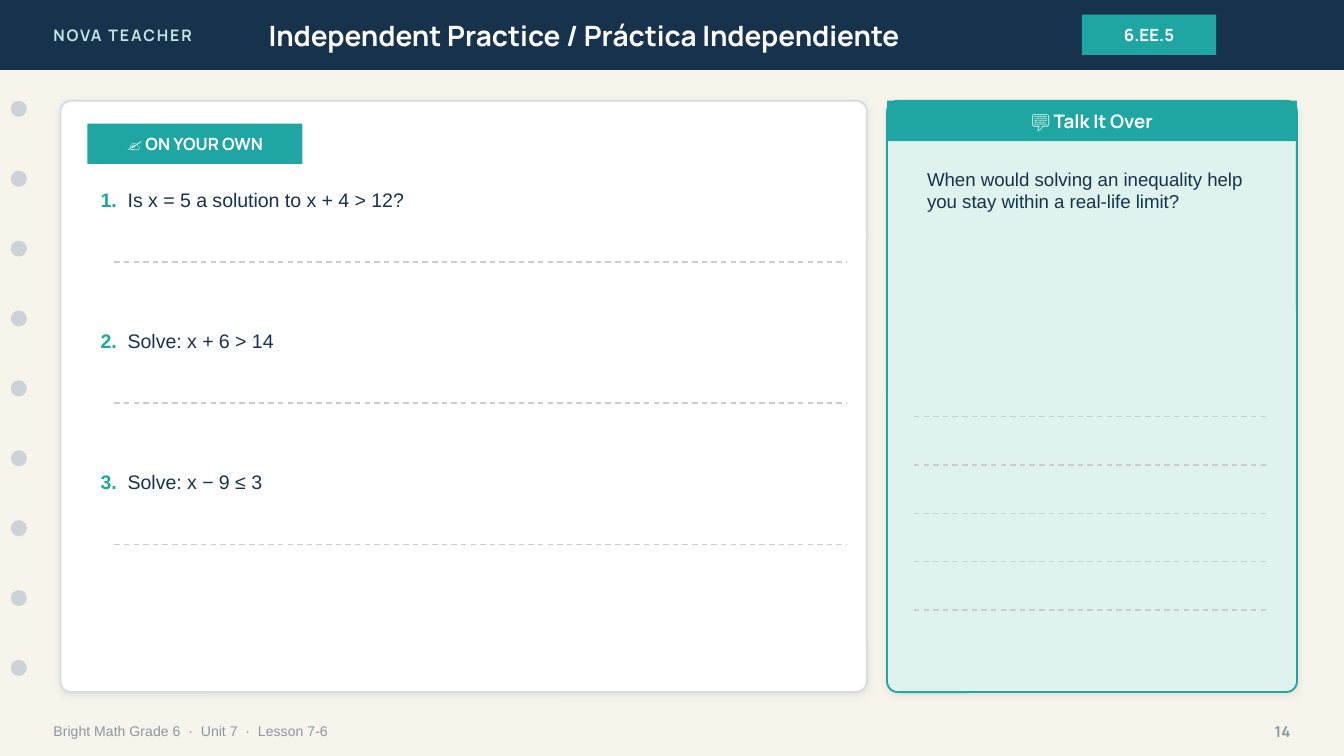
import pptx
import pptx.util
import pptx.dml.color
import pptx.enum.dml
import pptx.enum.shapes
import pptx.enum.text
import pptx.oxml
import pptx.oxml.ns

RGBColor = pptx.dml.color.RGBColor
SHAPE = pptx.enum.shapes.MSO_SHAPE
ALIGN = pptx.enum.text.PP_ALIGN
ANCHOR = pptx.enum.text.MSO_ANCHOR

# Content
BRAND = "NOVA TEACHER"
TITLE = "Independent Practice / Práctica Independiente"
STANDARD = "6.EE.5"
PRACTICE_LABEL = "✍️ ON YOUR OWN"
PROBLEMS = ["Is x = 5 a solution to x + 4 > 12?", "Solve: x + 6 > 14", "Solve: x − 9 ≤ 3"]
TALK_LABEL = "💬 Talk It Over"
TALK_PROMPT = "When would solving an inequality help you stay within a real-life limit?"
FOOTER = "Bright Math Grade 6  ·  Unit 7  ·  Lesson 7-6"
PAGE = "14"

# Style
HEAD, BODY = "Manrope", "Arial"
NAVY = RGBColor(0x17, 0x32, 0x4D)
TEAL = RGBColor(0x1F, 0xA6, 0xA2)
MINT = RGBColor(0xDF, 0xF2, 0xEE)
AQUA = RGBColor(0xBF, 0xE6, 0xE2)
CREAM = RGBColor(0xF7, 0xF4, 0xEC)
WHITE = RGBColor(0xFF, 0xFF, 0xFF)
HOLE = RGBColor(0xCB, 0xD3, 0xD9)
BORDER = RGBColor(0xD6, 0xDB, 0xDF)
RULE = RGBColor(0xC7, 0xCD, 0xD2)
GREY = RGBColor(0x8A, 0x96, 0xA3)

# Grid: all lengths are hundredths of the slide width
prs = pptx.Presentation()
prs.slide_width = pptx.util.Inches(10)
prs.slide_height = prs.slide_width * 9 // 16
HEADER_H = 5.2
TOP, CARD_H, TAG_H = 7.5, 44, 3
LEFT, LEFT_W = 4.5, 60
RIGHT, RIGHT_W = 66, 30.5
INSET = 2
HOLES, HOLE_STEP = 9, 5.2
PROBLEM_TOP, PROBLEM_STEP, ANSWER_DROP = 13.5, 10.5, 6
NOTE_TOP, NOTE_LINES, NOTE_STEP = 31, 5, 3.6

slide = prs.slides.add_slide(prs.slide_layouts[6])
slide.background.fill.solid()
slide.background.fill.fore_color.rgb = CREAM


def grid(*lengths):
    return [round(prs.slide_width * n / 100) for n in lengths]


def write(s, runs, align=ALIGN.LEFT, anchor=ANCHOR.MIDDLE):
    """Runs are (text, font, size, colour, bold)."""
    tf = s.text_frame
    tf.word_wrap = True
    tf.vertical_anchor = anchor
    p = tf.paragraphs[0]
    p.alignment = align
    for text, font, size, colour, bold in runs:
        r = p.add_run()
        r.text = text
        r.font.name, r.font.size, r.font.bold = font, pptx.util.Pt(size), bold
        r.font.color.rgb = colour
    return p


def add_text(box, runs, **layout):
    return write(slide.shapes.add_textbox(*grid(*box)), runs, **layout)


def add_block(kind, box, fill):
    s = slide.shapes.add_shape(kind, *grid(*box))
    s.shadow.inherit = False
    s.fill.solid()
    s.fill.fore_color.rgb = fill
    s.line.fill.background()
    return s


def add_tag(box, text, size):
    s = add_block(SHAPE.RECTANGLE, box, TEAL)
    write(s, [(text, HEAD, size, WHITE, True)], ALIGN.CENTER)


def add_card(box, fill, border, radius):
    s = add_block(SHAPE.ROUNDED_RECTANGLE, box, fill)
    s.adjustments[0] = radius
    s.line.color.rgb = border
    s.line.width = pptx.util.Pt(1)
    effects = s._element.spPr.find(pptx.oxml.ns.qn("a:effectLst"))
    effects.append(pptx.oxml.parse_xml(
        f'<a:outerShdw {pptx.oxml.ns.nsdecls("a")} blurRad="50800" dist="12700"'
        ' dir="5400000" algn="bl" rotWithShape="0"><a:srgbClr val="1C2E42">'
        '<a:alpha val="10000"/></a:srgbClr></a:outerShdw>'))


def add_rule(x1, x2, y):
    s = slide.shapes.add_connector(
        pptx.enum.shapes.MSO_CONNECTOR.STRAIGHT, *grid(x1, y, x2, y))
    s.line.color.rgb = RULE
    s.line.width = pptx.util.Pt(0.75)
    s.line.dash_style = pptx.enum.dml.MSO_LINE.DASH
    s._element.spPr.append(pptx.oxml.parse_xml(
        f'<a:effectLst {pptx.oxml.ns.nsdecls("a")}/>'))


# Header bar
add_block(SHAPE.RECTANGLE, (0, 0, 100, HEADER_H), NAVY)
p = add_text((3, 0, 24, HEADER_H), [(BRAND, HEAD, 8.5, AQUA, True)])
p.runs[0].font._element.set("spc", "100")
add_text((19, 0, 56, HEADER_H), [(TITLE, HEAD, 15, WHITE, True)])
add_tag((80.5, 1.1, 10, TAG_H), STANDARD, 9)

# Binder holes
for i in range(HOLES):
    add_block(SHAPE.OVAL, (0.8, TOP + i * HOLE_STEP, 1.2, 1.2), HOLE)

# Footer
add_text((3, 53, 70, 2.8), [(FOOTER, BODY, 7.5, GREY, False)])
add_text((92, 53, 5, 2.8), [(PAGE, HEAD, 8, GREY, True)], align=ALIGN.RIGHT)

# Practice card
add_card((LEFT, TOP, LEFT_W, CARD_H), WHITE, BORDER, 0.018)
add_tag((LEFT + INSET, 9.2, 16, TAG_H), PRACTICE_LABEL, 9)
for i, problem in enumerate(PROBLEMS):
    y = PROBLEM_TOP + i * PROBLEM_STEP
    add_text((LEFT + INSET, y, 56.5, 5),
             [(f"{i + 1}.  ", BODY, 10.5, TEAL, True), (problem, BODY, 10.5, NAVY, False)],
             anchor=ANCHOR.TOP)
    add_rule(LEFT + 2 * INSET, 63, y + ANSWER_DROP)

# Discussion card
add_card((RIGHT, TOP, RIGHT_W, CARD_H), MINT, TEAL, 0.026)
add_tag((RIGHT, TOP, RIGHT_W, TAG_H), TALK_LABEL, 10)
add_text((RIGHT + INSET, 12, 27, 17), [(TALK_PROMPT, BODY, 10, NAVY, False)],
         anchor=ANCHOR.TOP)
for i in range(NOTE_LINES):
    add_rule(RIGHT + INSET, RIGHT + RIGHT_W - INSET, NOTE_TOP + i * NOTE_STEP)

prs.save("out.pptx")
